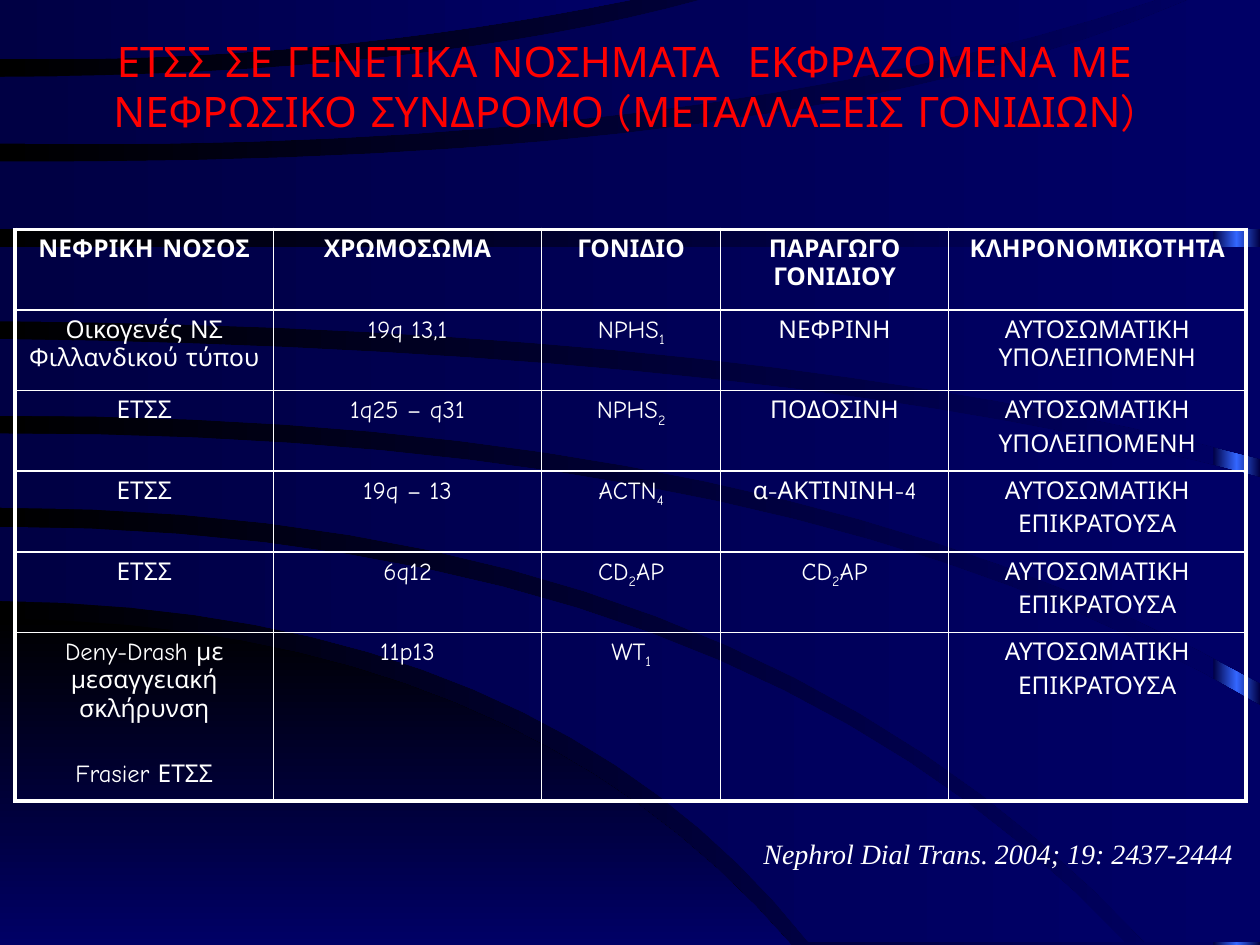
from copy import deepcopy
from dataclasses import dataclass

from lxml import etree
from pptx import Presentation
from pptx import util as u
from pptx.dml.color import RGBColor
from pptx.enum import shapes, text
from pptx.oxml.ns import qn


@dataclass(frozen=True)
class Theme:
    black: str = "000000"
    navy: str = "000066"
    deep: str = "000044"
    glow: str = "3366FF"
    title: str = "FF0000"
    body: str = "FFFFFF"
    font: str = "Comic Neue"
    cite_font: str = "Times New Roman"
    title_size: int = 24
    cell_size: int = 14
    cite_size: int = 16
    outer_line: float = 2.25
    inner_line: float = 1


def curve(y, bend, end, steps=16):
    points = []
    for i in range(steps + 1):
        t = i / steps
        weights = (1 - t) ** 2, 2 * t * (1 - t), t ** 2
        points.append(tuple(sum(w * v for w, v in zip(weights, axis))
                            for axis in zip((0, y), bend, end)))
    return points


def flat(y, right=10):
    return [(0, y), (right, y)]


def band(upper, lower, corner=()):
    return [*upper, *corner, *reversed(lower)]


HILL = band(curve(4.91, (4.08, 4.95), (6.28, 7.5)), flat(7.5, 6.28))
BANDS = [
    band(curve(4.18, (5.84, 4.21), (8.93, 7.48)), curve(4.77, (4.31, 4.82), (6.42, 7.48))),
    band(curve(3.44, (6.4, 3.44), (10, 5.6)), curve(4.03, (5.88, 4.03), (9.09, 7.48)),
         [(10, 7.48)]),
    band(curve(2.69, (6.32, 2.78), (10, 3.79)), curve(3.3, (6.2, 3.28), (10, 5.42))),
    band(flat(1.96), curve(2.55, (6.04, 2.59), (10, 3.64))),
    band(curve(1.28, (6.37, 1.33), (9.43, 0)), flat(1.82), [(10, 0)]),
    band(curve(0.61, (3.38, 0.6), (5.56, 0)), curve(1.14, (5.5, 1.22), (9.17, 0))),
    band(flat(0, 5), curve(0.47, (2.55, 0.5), (5, 0))),
]

DOMINANT = "ΑΥΤΟΣΩΜΑΤΙΚΗ\nΕΠΙΚΡΑΤΟΥΣΑ"
ROWS = [
    ["ΝΕΦΡΙΚΗ ΝΟΣΟΣ", "ΧΡΩΜΟΣΩΜΑ", "ΓΟΝΙΔΙΟ", "ΠΑΡΑΓΩΓΟ ΓΟΝΙΔΙΟΥ", "ΚΛΗΡΟΝΟΜΙΚΟΤΗΤΑ"],
    ["Οικογενές ΝΣ Φιλλανδικού τύπου", "19q 13,1", "NPHS_1", "ΝΕΦΡΙΝΗ",
     "ΑΥΤΟΣΩΜΑΤΙΚΗ ΥΠΟΛΕΙΠΟΜΕΝΗ"],
    ["ΕΤΣΣ", "1q25 – q31", "NPHS_2", "ΠΟΔΟΣΙΝΗ", "ΑΥΤΟΣΩΜΑΤΙΚΗ\nΥΠΟΛΕΙΠΟΜΕΝΗ"],
    ["ΕΤΣΣ", "19q – 13", "ACTN_4", "α-ΑΚΤΙΝΙΝΗ-4", DOMINANT],
    ["ΕΤΣΣ", "6q12", "CD_2AP", "CD_2AP", DOMINANT],
    ["Deny-Drash με μεσαγγειακή σκλήρυνση\nFrasier ΕΤΣΣ", "11p13", "WT_1", "", DOMINANT],
]
COLS = [2.05, 2.13, 1.42, 1.81, 2.36]
HEIGHTS = [0.64] * 5 + [1.34]
WIDE_GAPS = {(5, 0): 21}


def put_text(tf, content, *, font, size, color, align="CENTER", bold=False, italic=False, gap=3):
    tf.word_wrap = True
    for i, line in enumerate(content.split("\n")):
        p = tf.paragraphs[0] if i == 0 else tf.add_paragraph()
        p.alignment = getattr(text.PP_ALIGN, align)
        if i:
            p.space_before = u.Pt(gap)
        p.font.size = u.Pt(size)
        plain, *rest = line.split("_")
        pieces = [(plain, False)]
        for part in rest:
            pieces += [(part[0], True), (part[1:], False)]
        for piece, subscript in pieces:
            if not piece:
                continue
            r = p.add_run()
            r.text = piece
            r.font.name, r.font.size = font, u.Pt(size)
            r.font.bold, r.font.italic = bold, italic
            r.font.color.rgb = RGBColor.from_string(color)
            if subscript:
                r._r.get_or_add_rPr().set("baseline", "-25000")


class SlideBuilder:
    def __init__(self, s, theme):
        self.s, self.theme = s, theme

    def gradient(self, fill, colors, angle=0):
        fill.gradient()
        fill.gradient_angle = angle
        first = fill.gradient_stops[0]._gs
        for _ in colors[2:]:
            first.addnext(deepcopy(first))
        for i, (stop, color) in enumerate(zip(fill.gradient_stops, colors)):
            stop.position = i / (len(colors) - 1)
            stop.color.rgb = RGBColor.from_string(color)

    def finish(self, sp, colors, angle=0):
        sp.shadow.inherit = False
        sp.line.fill.background()
        self.gradient(sp.fill, colors, angle)

    def background(self, colors):
        self.gradient(self.s.background.fill, colors)

    def rect(self, box, colors):
        sp = self.s.shapes.add_shape(shapes.MSO_SHAPE.RECTANGLE, *map(u.Inches, box))
        self.finish(sp, colors)

    def outline(self, points, colors, angle=0):
        points = [(u.Inches(x), u.Inches(y)) for x, y in points]
        builder = self.s.shapes.build_freeform(*points[0])
        builder.add_line_segments(points[1:], close=True)
        self.finish(builder.convert_to_shape(), colors, angle)

    def label(self, box, content, **fmt):
        tf = self.s.shapes.add_textbox(*map(u.Inches, box)).text_frame
        put_text(tf, content, **fmt)
        tf.auto_size = text.MSO_AUTO_SIZE.SHAPE_TO_FIT_TEXT

    def borders(self, cell, outer_sides):
        tcPr = cell._tc.get_or_add_tcPr()
        for i, side in enumerate("LRTB"):
            width = self.theme.outer_line if side in outer_sides else self.theme.inner_line
            ln = etree.Element(qn(f"a:ln{side}"), w=str(u.Pt(width)))
            solid = etree.SubElement(ln, qn("a:solidFill"))
            etree.SubElement(solid, qn("a:srgbClr"), val=self.theme.body)
            tcPr.insert(i, ln)

    def table(self, left, top, cols, heights, rows):
        t = self.theme
        size = map(u.Inches, (left, top, sum(cols), sum(heights)))
        table = self.s.shapes.add_table(len(rows), len(cols), *size).table
        table.first_row = table.horz_banding = False
        for column, width in zip(table.columns, cols):
            column.width = u.Inches(width)
        for i, row in enumerate(rows):
            table.rows[i].height = u.Inches(heights[i])
            for j, content in enumerate(row):
                cell = table.cell(i, j)
                cell.fill.background()
                edges = {"L": j == 0, "R": j == len(cols) - 1, "T": i == 0, "B": i == len(rows) - 1}
                self.borders(cell, [side for side, outer in edges.items() if outer])
                put_text(cell.text_frame, content, font=t.font, size=t.cell_size, color=t.body,
                         bold=i == 0, gap=WIDE_GAPS.get((i, j), 3))


def main():
    prs = Presentation()
    prs.slide_width, prs.slide_height = u.Inches(10), u.Inches(7.5)
    t = Theme()
    b = SlideBuilder(prs.slides.add_slide(prs.slide_layouts[6]), t)
    b.background([t.black, t.navy])
    b.rect((9.63, 0, 0.37, 7.5), [t.deep, t.glow, t.deep])
    b.outline(HILL, [t.black, t.navy], angle=270)
    for points in BANDS:
        b.outline(points, [t.deep, t.navy])
    b.label((0.27, 0.23, 9.37, 0.91),
            "ΕΤΣΣ ΣΕ ΓΕΝΕΤΙΚΑ ΝΟΣΗΜΑΤΑ  ΕΚΦΡΑΖΟΜΕΝΑ ΜΕ ΝΕΦΡΩΣΙΚΟ ΣΥΝΔΡΟΜΟ (ΜΕΤΑΛΛΑΞΕΙΣ ΓΟΝΙΔΙΩΝ)",
            font=t.font, size=t.title_size, color=t.title)
    b.table(0.12, 1.82, COLS, HEIGHTS, ROWS)
    b.label((1.69, 6.59, 8.19, 0.37), "Nephrol Dial Trans. 2004; 19: 2437-2444",
            font=t.cite_font, size=t.cite_size, color=t.body, align="RIGHT", italic=True)
    prs.save("out.pptx")


if __name__ == "__main__":
    main()
